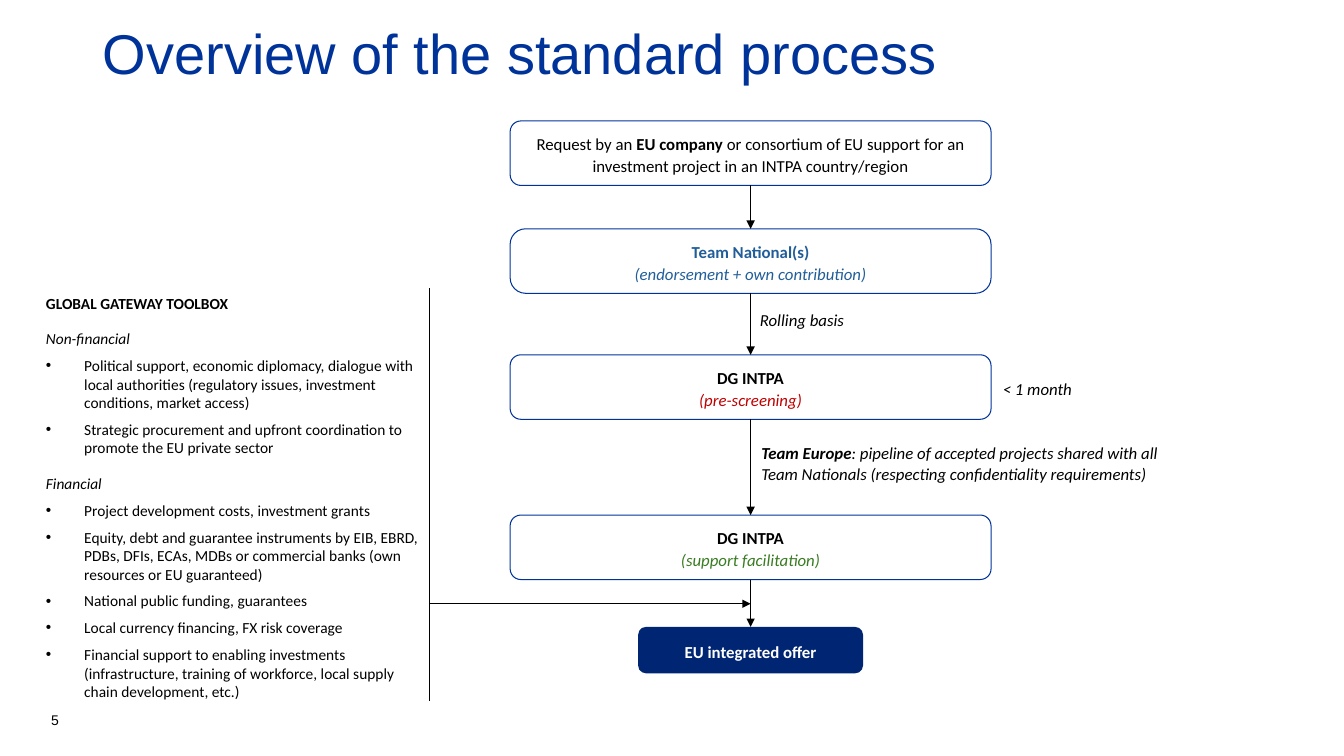
from lxml.etree import SubElement
from pptx import Presentation
from pptx.dml.color import RGBColor
from pptx.enum.shapes import MSO_CONNECTOR, MSO_SHAPE
from pptx.enum.text import MSO_ANCHOR, PP_ALIGN
from pptx.oxml.ns import qn
from pptx.util import Inches, Pt

COLORS = {"blue": "003399", "navy": "002673", "team": "215E99", "red": "C00000",
          "green": "3A7C22", "black": "000000", "white": "FFFFFF"}
TITLE = "Overview of the standard process"
PAGE_NUMBER = "5"

STEPS = [
    (1.2, [("Request by an ", "", "black"), ("EU company", "b", "black"),
           (" or consortium of EU support for an investment project in an INTPA country/region", "", "black")]),
    (2.27, [("Team National(s)", "b", "team"), "break",
            ("(endorsement + own contribution)", "i", "team")]),
    (3.52, [("DG INTPA", "b", "black"), "break", ("(pre-screening)", "i", "red")]),
    (5.11, [("DG INTPA", "b", "black"), "break", ("(support facilitation)", "i", "green")]),
]
OFFER = [("EU integrated offer", "b", "white")]
LABELS = [
    ((7.5, 2.99, 1.14, 0.34), [("Rolling basis", "i", "black")]),
    ((7.5, 4.26, 4.43, 0.64), [
        ("Team Europe", "bi", "black"),
        (": pipeline of accepted projects shared with all Team Nationals "
         "(respecting confidentiality requirements)", "i", "black")]),
    ((9.91, 3.67, 1.14, 0.34), [("< 1 month", "i", "black")]),
]
TOOLBOX = [
    ("heading", "GLOBAL GATEWAY TOOLBOX", 12),
    ("group", "Non-financial", 6),
    ("item", "Political support, economic diplomacy, dialogue with local authorities "
             "(regulatory issues, investment conditions, market access)", 6),
    ("item", "Strategic procurement and upfront coordination to promote the EU private sector", 12),
    ("group", "Financial", 6),
    ("item", "Project development costs, investment grants", 6),
    ("item", "Equity, debt and guarantee instruments by EIB, EBRD, PDBs, DFIs, ECAs, MDBs "
             "or commercial banks (own resources or EU guaranteed)", 6),
    ("item", "National public funding, guarantees", 6),
    ("item", "Local currency financing, FX risk coverage", 6),
    ("item", "Financial support to enabling investments (infrastructure, training of workforce, "
             "local supply chain development, etc.)", 6),
]

STEP_LEFT, STEP_WIDTH, STEP_HEIGHT = 5.06, 4.77, 0.64
CENTER = STEP_LEFT + STEP_WIDTH / 2
OFFER_TOP, OFFER_WIDTH, OFFER_HEIGHT = 6.22, 2.23, 0.46
BRACKET_X, BRACKET_TOP, BRACKET_BOTTOM, FEED_Y = 4.26, 2.86, 6.95, 5.99


def color(name):
    return RGBColor.from_string(COLORS[name])


def add_box(page, place, fill=None, line=None, insets=(0.02, 0.04, 0.02, 0.02)):
    box = page.shapes.add_shape(MSO_SHAPE.ROUNDED_RECTANGLE, *map(Inches, place))
    box.shadow.inherit = False
    if fill:
        box.fill.solid()
        box.fill.fore_color.rgb = color(fill)
    else:
        box.fill.background()
    if line:
        box.line.color.rgb = color(line)
        box.line.width = Pt(0.75)
    else:
        box.line.fill.background()
    frame = box.text_frame
    frame.word_wrap = True
    frame.vertical_anchor = MSO_ANCHOR.MIDDLE
    (frame.margin_left, frame.margin_top,
     frame.margin_right, frame.margin_bottom) = map(Inches, insets)
    return box


def write_spans(box, spans, align):
    para = box.text_frame.paragraphs[0]
    para.alignment = align
    para.line_spacing = 1.07
    para.space_after = Pt(8)
    para.font.name, para.font.size = "Calibri", Pt(12)
    for part in spans:
        if part == "break":
            para.add_line_break()
            continue
        text, style, shade = part
        span = para.add_run()
        span.text = text
        span.font.name, span.font.size = "Calibri", Pt(12)
        span.font.bold = "b" in style
        span.font.italic = "i" in style
        span.font.color.rgb = color(shade)


def add_line(page, start, end, width=0.75, arrow=True):
    line = page.shapes.add_connector(MSO_CONNECTOR.STRAIGHT, *map(Inches, start + end))
    line.line.color.rgb = color("black")
    line.line.width = Pt(width)
    if arrow:
        SubElement(line.line._get_or_add_ln(), qn("a:tailEnd"), type="triangle")
    SubElement(line._element.spPr, qn("a:effectLst"))
    return line


def add_bullet(para):
    properties = para._p.get_or_add_pPr()
    properties.set("marL", str(Inches(0.38)))
    properties.set("indent", str(-Inches(0.38)))
    SubElement(SubElement(properties, qn("a:buClr")), qn("a:srgbClr"), val=COLORS["black"])
    SubElement(properties, qn("a:buFont"), typeface="Arial")
    SubElement(properties, qn("a:buChar"), char="•")


def add_title(page):
    title = page.shapes.title
    title.left, title.top, title.width, title.height = map(Inches, (0.92, 0.11, 11.5, 0.89))
    title.text_frame.text = TITLE
    title.text_frame.vertical_anchor = MSO_ANCHOR.MIDDLE
    para = title.text_frame.paragraphs[0]
    para.alignment = PP_ALIGN.LEFT
    para.line_spacing = 0.9
    para.font.name, para.font.size = "Arial", Pt(40)
    para.font.color.rgb = color("blue")


def add_page_number(page):
    box = page.shapes.add_textbox(*map(Inches, (0.41, 6.87, 3, 0.4)))
    box.text_frame.word_wrap = True
    box.text_frame.vertical_anchor = MSO_ANCHOR.BOTTOM
    para = box.text_frame.paragraphs[0]
    para.text = PAGE_NUMBER
    para.font.name, para.font.size = "Arial", Pt(10)
    para.font.color.rgb = color("black")


def add_process(page):
    chain = []
    for top, spans in STEPS:
        step = add_box(page, (STEP_LEFT, top, STEP_WIDTH, STEP_HEIGHT), line="blue")
        write_spans(step, spans, PP_ALIGN.CENTER)
        chain.append(step)
    chain[1].adjustments[0] = 0.24
    offer = add_box(page, (CENTER - OFFER_WIDTH / 2, OFFER_TOP, OFFER_WIDTH, OFFER_HEIGHT), fill="navy")
    write_spans(offer, OFFER, PP_ALIGN.CENTER)
    chain.append(offer)
    for upper, lower in zip(chain, chain[1:]):
        arrow = add_line(page, (CENTER, 0), (CENTER, 1))
        arrow.begin_connect(upper, 2)
        arrow.end_connect(lower, 0)
    for place, spans in LABELS:
        write_spans(add_box(page, place), spans, PP_ALIGN.LEFT)


def add_toolbox(page):
    box = add_box(page, (0.16, 2.91, 4.34, 4.05), fill="white", insets=(0.1, 0.05, 0.1, 0.05))
    frame = box.text_frame
    for index, (kind, text, after) in enumerate(TOOLBOX):
        para = frame.add_paragraph() if index else frame.paragraphs[0]
        para.text = text
        para.alignment = PP_ALIGN.LEFT
        para.space_after = Pt(after)
        if kind == "item":
            add_bullet(para)
        para.font.name, para.font.size = "Calibri", Pt(11)
        para.font.bold = kind == "heading"
        para.font.italic = kind == "group"
        para.font.color.rgb = color("black")
    add_line(page, (BRACKET_X, BRACKET_TOP), (BRACKET_X, BRACKET_BOTTOM), width=1, arrow=False)
    add_line(page, (BRACKET_X, FEED_Y), (CENTER, FEED_Y))


def main():
    deck = Presentation()
    deck.slide_width, deck.slide_height = Inches(13.33), Inches(7.5)
    page = deck.slides.add_slide(deck.slide_layouts[5])
    add_title(page)
    add_page_number(page)
    add_process(page)
    add_toolbox(page)
    deck.save("out.pptx")


if __name__ == "__main__":
    main()
